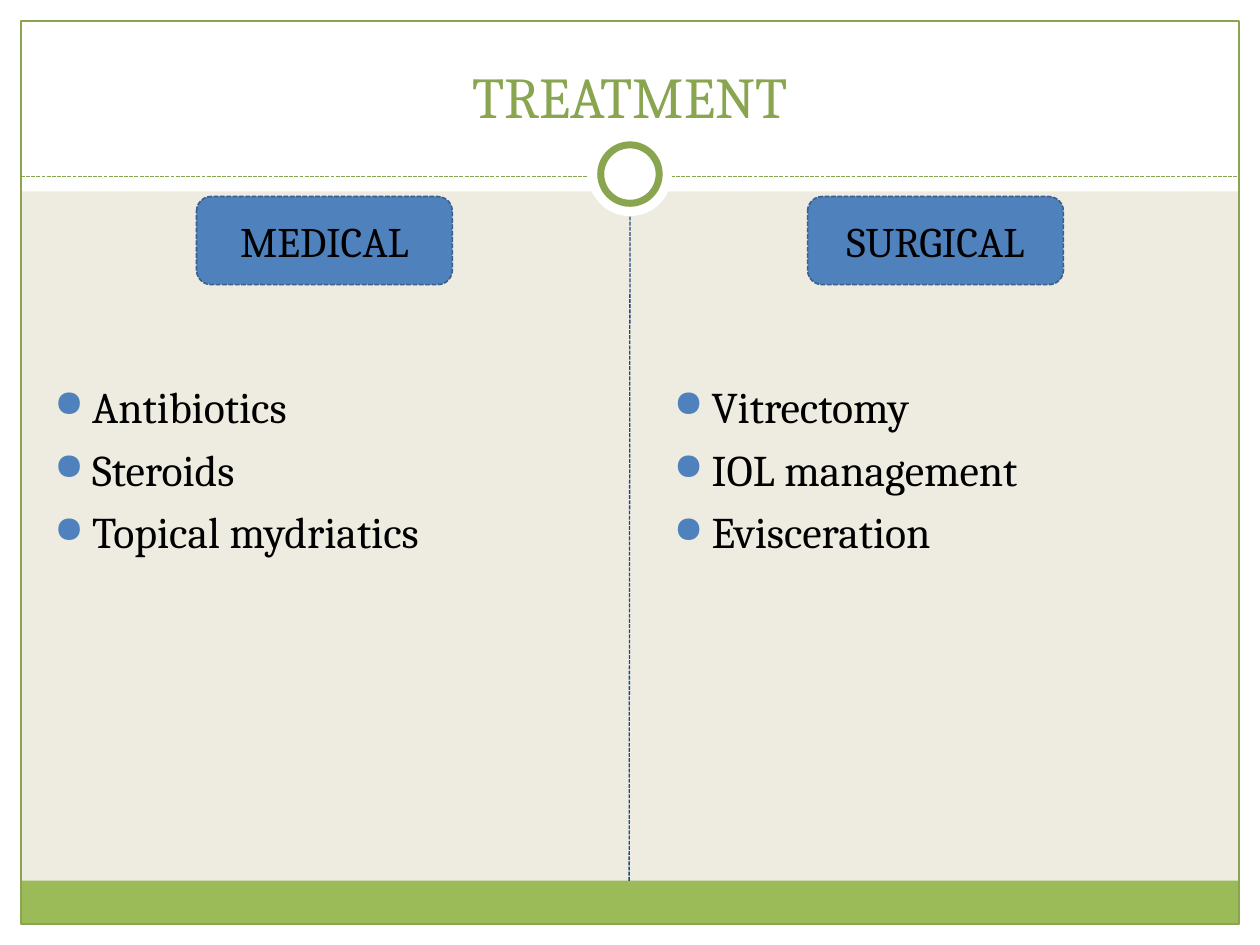
from lxml import etree
from pptx import Presentation
from pptx.dml.color import RGBColor
from pptx.enum.dml import MSO_LINE
from pptx.enum.shapes import MSO_CONNECTOR, MSO_SHAPE
from pptx.enum.text import MSO_ANCHOR, PP_ALIGN
from pptx.oxml.ns import qn
from pptx.util import Pt

RECTANGLE, ROUNDED, OVAL = MSO_SHAPE.RECTANGLE, MSO_SHAPE.ROUNDED_RECTANGLE, MSO_SHAPE.OVAL
STRAIGHT = MSO_CONNECTOR.STRAIGHT
DASH = MSO_LINE.SQUARE_DOT
LEFT, CENTER = PP_ALIGN.LEFT, PP_ALIGN.CENTER
TOP, MIDDLE, BOTTOM = MSO_ANCHOR.TOP, MSO_ANCHOR.MIDDLE, MSO_ANCHOR.BOTTOM

TITLE = "TREATMENT"
COLUMNS = [
    {"heading": "MEDICAL", "left": 24, "heading_left": 112.3,
     "items": ["Antibiotics", "Steroids", "Topical mydriatics"]},
    {"heading": "SURGICAL", "left": 378, "heading_left": 461.5,
     "items": ["Vitrectomy", "IOL management", "Evisceration"]},
]

FONT = "Cambria"
WHITE, BLACK, SAND = "FFFFFF", "000000", "EEECE1"
GREEN, DARK_GREEN = "9BBB59", "89A54F"
BLUE, EDGE_BLUE, NAVY = "4F81BD", "3A5F8C", "1F497D"

WIDTH, HEIGHT = 720, 540
MARGIN = 12
HEADER = 109.4
RULE_Y = 100.8
RING_Y = 99.5
HALO, RING = 48, 33.4
FOOTER_TOP, FOOTER_HEIGHT = 503.3, 24.5
COLUMN_TOP, COLUMN_WIDTH, COLUMN_HEIGHT = 108, 318, 368.6
LIST_INSET = 109
INDENT = 21.6


def color(value):
    return RGBColor.from_string(value)


def style_line(line, value, weight, dash=None):
    line.color.rgb = color(value)
    line.width = Pt(weight)
    if dash:
        line.dash_style = dash


def add_panel(page, kind, left, top, width, height, fill=None, line=None):
    panel = page.shapes.add_shape(kind, Pt(left), Pt(top), Pt(width), Pt(height))
    panel.shadow.inherit = False
    if fill:
        panel.fill.solid()
        panel.fill.fore_color.rgb = color(fill)
    else:
        panel.fill.background()
    if line:
        style_line(panel.line, *line)
    else:
        panel.line.fill.background()
    return panel


def add_rule(page, start, end, value):
    rule = page.shapes.add_connector(STRAIGHT, *(Pt(n) for n in start + end))
    style_line(rule.line, value, 0.75, DASH)
    etree.SubElement(rule.element.spPr, qn("a:effectLst"))
    return rule


def add_bullet(para):
    props = para._p.get_or_add_pPr()
    props.set("marL", str(Pt(INDENT)))
    props.set("indent", str(-Pt(INDENT)))
    tint = etree.SubElement(props, qn("a:buClr"))
    etree.SubElement(tint, qn("a:srgbClr"), val=BLUE)
    etree.SubElement(props, qn("a:buSzPct"), val="85000")
    etree.SubElement(props, qn("a:buChar"), char="●")


def write(box, lines, size, value=BLACK, align=CENTER, anchor=MIDDLE,
          inset=3.6, before=0, bullet=False):
    frame = box.text_frame
    frame.word_wrap = True
    frame.vertical_anchor = anchor
    frame.margin_left = frame.margin_right = Pt(7.2)
    frame.margin_top, frame.margin_bottom = Pt(inset), Pt(3.6)
    for index, line in enumerate(lines):
        para = frame.add_paragraph() if index else frame.paragraphs[0]
        para.alignment = align
        para.space_before = Pt(before if index else 0)
        if bullet:
            add_bullet(para)
        span = para.add_run()
        span.text = line
        span.font.name = FONT
        span.font.size = Pt(size)
        span.font.color.rgb = color(value)


def add_frame(page):
    inner_width, inner_height = WIDTH - 2 * MARGIN, HEIGHT - 2 * MARGIN
    for area in [
        (0, HEIGHT - MARGIN, WIDTH, MARGIN),
        (0, 0, WIDTH, HEADER),
        (0, 0, MARGIN, HEIGHT),
        (WIDTH - MARGIN, 0, MARGIN, HEIGHT),
    ]:
        add_panel(page, RECTANGLE, *area, fill=WHITE)
    footer = add_panel(page, RECTANGLE, 11.5, FOOTER_TOP, inner_width, FOOTER_HEIGHT, fill=GREEN)
    add_panel(page, RECTANGLE, MARGIN, MARGIN, inner_width, inner_height, line=(DARK_GREEN, 0.75))
    add_rule(page, (MARGIN, RULE_Y), (WIDTH - MARGIN, RULE_Y), DARK_GREEN)
    for size, line in [(HALO, None), (RING, (DARK_GREEN, 4))]:
        add_panel(page, OVAL, (WIDTH - size) / 2, RING_Y - size / 2, size, size,
                  fill=WHITE, line=line)
    middle = WIDTH / 2
    divider = add_rule(page, (middle, FOOTER_TOP), (middle, RING_Y + HALO / 2), NAVY)
    divider.begin_connect(footer, 0)


def add_title(page):
    title = page.shapes.title
    title.left, title.top, title.width, title.height = Pt(24), Pt(18), Pt(672), Pt(60)
    write(title, [TITLE], 33, value=DARK_GREEN, anchor=BOTTOM)
    title.element.getparent().append(title.element)


def add_columns(page):
    for column in COLUMNS:
        box = page.shapes.add_textbox(Pt(column["left"]), Pt(COLUMN_TOP),
                                      Pt(COLUMN_WIDTH), Pt(COLUMN_HEIGHT))
        write(box, column["items"], 25, align=LEFT, anchor=TOP,
              inset=LIST_INSET, before=5.86, bullet=True)
    for column in COLUMNS:
        heading = add_panel(page, ROUNDED, column["heading_left"], 112.3, 146.2, 50.4,
                            fill=BLUE, line=(EDGE_BLUE, 0.9, DASH))
        write(heading, [column["heading"]], 24)


def main():
    deck = Presentation()
    deck.slide_width, deck.slide_height = Pt(WIDTH), Pt(HEIGHT)
    page = deck.slides.add_slide(deck.slide_layouts[5])
    page.background.fill.solid()
    page.background.fill.fore_color.rgb = color(SAND)
    add_frame(page)
    add_title(page)
    add_columns(page)
    deck.save("out.pptx")


if __name__ == "__main__":
    main()
